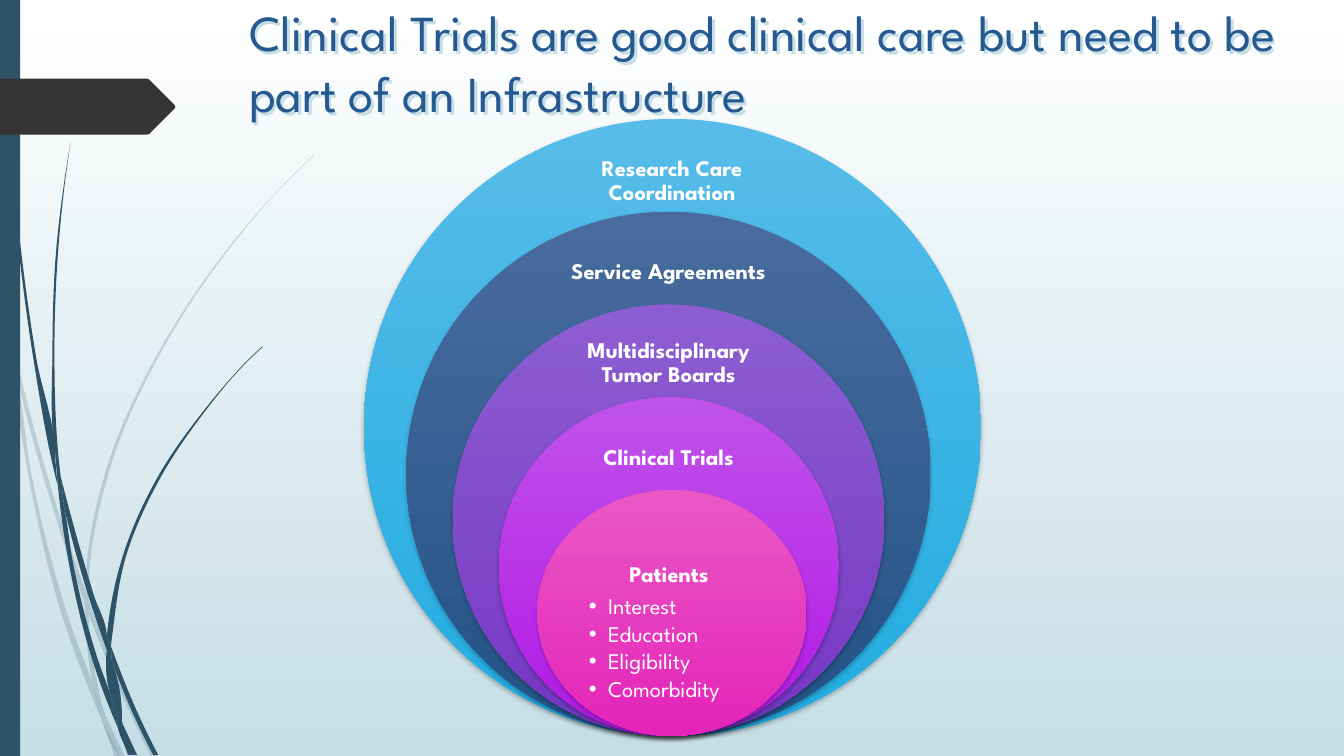
import math
import typing
from dataclasses import dataclass

import lxml.etree
import pptx
import pptx.dml.color
import pptx.dml.fill
import pptx.enum.shapes
import pptx.enum.text
import pptx.oxml.ns
import pptx.util

Point = tuple[float, float]
Edge = tuple[Point, ...]

COLUMNS, ROWS = 1333, 750
SLIDE_WIDTH, SLIDE_HEIGHT = pptx.util.Inches(13.33), pptx.util.Inches(7.5)


@dataclass(frozen=True)
class Theme:
    font: str = "League Spartan"
    title_size: float = 36
    label_size: float = 16
    title: str = "265991"
    label: str = "FFFFFF"
    stem: str = "2E5369"
    tab: str = "353535"
    shadow: str = "000000"
    title_shadow: str = "C5DEE5"
    backdrop: tuple[str, str] = ("FFFFFF", "C5DEE5")


@dataclass(frozen=True)
class Box:
    column: float
    row: float
    columns: float
    rows: float

    def format(self) -> dict[str, int]:
        return {"left": across(self.column), "top": down(self.row),
                "width": across(self.columns), "height": down(self.rows)}


@dataclass(frozen=True)
class Ring:
    column: float
    columns: float
    gradient: tuple[str, str]
    label: str = ""
    label_box: typing.Optional[Box] = None


@dataclass(frozen=True)
class Blade:
    """A grass blade, outlined by one edge going out and one coming back."""
    out: Edge
    back: Edge


THEME = Theme()
RING_TOP, RING_STEP, RING_BOTTOM = 118, 92, 730
RINGS = (
    Ring(361, 612, ("57BCE9", "22ADE2"), "Research Care Coordination", Box(552, 149, 229, 61)),
    Ring(403, 520, ("496B9E", "235387"), "Service Agreements", Box(551, 240, 224, 60)),
    Ring(449, 428, ("8D5ED1", "7536C4"), "Multidisciplinary Tumor Boards", Box(552, 331, 222, 59)),
    Ring(495, 337, ("C052EB", "B219E4"), "Clinical Trials", Box(572, 424, 182, 61)),
    Ring(533, 267, ("EA58C6", "E424B9")),
)
PATIENT_FACTORS = ("Interest", "Education", "Eligibility", "Comorbidity")
FAINT_BLADES = (
    Blade(((11, 350), (9, 322), (0, 282)), ((0, 299), (10, 344), (11, 350))),
    Blade(((17, 376), (58, 522), (84, 599)), ((85, 586), (62, 520), (14, 345))),
    Blade(((88, 610), (123, 694), (150, 751)), ((155, 751), (127, 692), (92, 607), (88, 596))),
    Blade(((119, 751), (124, 751)), ((105, 711),)),
    Blade(((11, 350), (28, 470), (65, 621), (92, 693), (101, 714)),
          ((99, 707), (93, 683), (70, 619), (31, 469), (17, 376), (11, 350))),
    Blade(((84, 599), (87, 646), (93, 683), (96, 692), (105, 711)),
          ((103, 706), (91, 646), (88, 610), (88, 608))),
    Blade(((88, 596), (88, 584), (110, 462), (160, 349), (229, 245), (268, 198), (290, 175), (312, 154)),
          ((312, 153), (289, 175), (268, 197), (228, 244), (158, 348), (107, 461), (85, 584), (85, 586))),
    Blade(((101, 714), (114, 751)), ((119, 751),)),
    Blade(((88, 608), (88, 610), (88, 596)), ((85, 586), (84, 599))),
    Blade(((93, 683), (99, 707), (101, 714), (119, 751)), ((105, 711), (96, 692))),
)
DARK_BLADES = (
    Blade(((3, 0), (4, 48), (7, 110), (17, 233), (33, 355), (56, 477), (57, 481)),
          ((55, 457), (55, 453), (36, 355), (19, 232), (8, 109), (5, 48), (4, 0))),
    Blade(((64, 505), (88, 592), (106, 645)), ((106, 633), (106, 631), (93, 590), (60, 472))),
    Blade(((111, 656), (132, 708), (152, 749)), ((157, 749), (136, 706), (113, 649), (110, 641))),
    Blade(((57, 477), (68, 557), (93, 659), (111, 708), (117, 722)),
          ((116, 717), (110, 691), (98, 657), (72, 556), (64, 505), (57, 477))),
    Blade(((60, 472), (58, 453), (54, 349), (58, 245), (63, 193), (70, 141)),
          ((70, 141), (62, 193), (56, 245), (52, 349), (55, 449), (60, 472))),
    Blade(((133, 749), (136, 749)), ((122, 719),)),
    Blade(((57, 477), (64, 505)), ((60, 472), (55, 449), (55, 453))),
    Blade(((110, 641), (111, 633), (125, 552), (158, 476), (205, 406), (231, 374), (245, 359), (261, 344)),
          ((260, 344), (245, 358), (231, 373), (204, 405), (156, 474), (122, 551), (106, 631))),
    Blade(((117, 722), (127, 749)), ((131, 749),)),
    Blade(((106, 645), (110, 691), (116, 706), (122, 719)), ((121, 716), (111, 656), (109, 651))),
    Blade(((106, 645), (109, 651), (111, 656)), ((110, 641), (106, 631))),
    Blade(((110, 691), (116, 717), (117, 722), (130, 749)), ((133, 749), (122, 719), (116, 706))),
)
TAB_OUTLINE = ((0, 78), (146, 78), (148, 79), (173, 104), (174, 106), (173, 108), (148, 133), (146, 133.5), (0, 133.5))


def across(columns: float) -> int:
    return round(SLIDE_WIDTH * columns / COLUMNS)


def down(rows: float) -> int:
    return round(SLIDE_HEIGHT * rows / ROWS)


def rgb(code: str) -> pptx.dml.color.RGBColor:
    return pptx.dml.color.RGBColor.from_string(code)


def apply(target: typing.Any, formats: dict[str, typing.Any]) -> None:
    for name, value in formats.items():
        setattr(target, name, value)


def add_child(parent: typing.Any, tag: str, **attributes: typing.Any) -> typing.Any:
    texts = {name: str(value) for name, value in attributes.items()}
    return lxml.etree.SubElement(parent, pptx.oxml.ns.qn(tag), texts)


def cast_shadow(shape: typing.Any, color: str, alpha: int, blur: float, distance: float, angle: int) -> None:
    shape.shadow.inherit = False
    effects = shape.element.spPr.find(pptx.oxml.ns.qn("a:effectLst"))
    shadow = add_child(effects, "a:outerShdw", blurRad=pptx.util.Pt(blur), dist=pptx.util.Pt(distance),
                       dir=angle * 60000, algn="tl", rotWithShape=0)
    add_child(add_child(shadow, "a:srgbClr", val=color), "a:alpha", val=alpha * 1000)


def paint_gradient(fill: pptx.dml.fill.FillFormat, colors: tuple[str, str]) -> None:
    fill.gradient()
    fill.gradient_angle = 270
    for stop, color in zip(fill.gradient_stops, colors):
        stop.color.rgb = rgb(color)


def paint_flat(shape: typing.Any, color: str, alpha: int = 100) -> None:
    shape.shadow.inherit = False
    shape.line.fill.background()
    shape.fill.solid()
    shape.fill.fore_color.rgb = rgb(color)
    if alpha < 100:
        swatch = next(shape.element.spPr.iter(pptx.oxml.ns.qn("a:srgbClr")))
        add_child(swatch, "a:alpha", val=alpha * 1000)


def slopes(edge: Edge) -> list[Point]:
    """Unit-speed tangent at each anchor, weighted towards the nearer neighbour."""
    chords = [math.dist(a, b) or 1 for a, b in zip(edge, edge[1:])]
    speeds = [((b[0] - a[0]) / c, (b[1] - a[1]) / c) for a, b, c in zip(edge, edge[1:], chords)]
    inner = [tuple((u * d + v * c) / (c + d) for u, v in zip(before, after))
             for before, after, c, d in zip(speeds, speeds[1:], chords, chords[1:])]
    if not inner:
        return speeds * 2
    first = tuple(2 * u - v for u, v in zip(speeds[0], inner[0]))
    final = tuple(2 * u - v for u, v in zip(speeds[-1], inner[-1]))
    return [first, *inner, final]


def add_outline(shapes: typing.Any, points: Edge, color: str, alpha: int = 100) -> typing.Any:
    first, *rest = [(across(x), down(y)) for x, y in points]
    builder = shapes.build_freeform(*first)
    builder.add_line_segments(rest, close=True)
    outline = builder.convert_to_shape()
    paint_flat(outline, color, alpha)
    return outline


def add_blade(shapes: typing.Any, blade: Blade, alpha: int) -> None:
    anchors = blade.out + blade.back
    outline = add_outline(shapes, anchors, THEME.stem, alpha)
    left, top = min(x for x, _ in anchors), min(y for _, y in anchors)
    segments = list(outline.element.iter(pptx.oxml.ns.qn("a:lnTo")))
    for edge, offset in ((blade.out, 0), (blade.back, len(blade.out))):
        if len(edge) < 3:
            continue
        tangents = slopes(edge)
        for index, (start, end) in enumerate(zip(edge, edge[1:])):
            segment, reach = segments[offset + index], math.dist(start, end) / 3
            for place, (anchor, tangent, sign) in enumerate(
                    ((start, tangents[index], 1), (end, tangents[index + 1], -1))):
                x, y = (a + sign * reach * t for a, t in zip(anchor, tangent))
                segment.insert(place, add_child(segment, "a:pt", x=across(x - left), y=down(y - top)))
            segment.tag = pptx.oxml.ns.qn("a:cubicBezTo")


def add_ring(shapes: typing.Any, ring: Ring, top: float) -> None:
    box = Box(ring.column, top, ring.columns, RING_BOTTOM - top)
    disc = shapes.add_shape(pptx.enum.shapes.MSO_SHAPE.OVAL, **box.format())
    paint_gradient(disc.fill, ring.gradient)
    disc.line.fill.background()
    cast_shadow(disc, THEME.shadow, 25, 3, 2, 90)
    if ring.label_box:
        label = shapes.add_textbox(**ring.label_box.format())
        format_frame(label.text_frame, pptx.enum.text.MSO_ANCHOR.MIDDLE)
        write_heading(label.text_frame.paragraphs[0], ring.label)


def format_frame(frame: typing.Any, anchor: typing.Any, across_inset: float = 12, down_inset: float = 12) -> None:
    apply(frame, {"word_wrap": True, "auto_size": pptx.enum.text.MSO_AUTO_SIZE.NONE, "vertical_anchor": anchor,
                  "margin_left": across(across_inset), "margin_right": across(across_inset),
                  "margin_top": down(down_inset), "margin_bottom": down(down_inset)})


def write(paragraph: typing.Any, text: str, size: float, color: str, bold: bool, **formats: typing.Any) -> None:
    apply(paragraph, {"space_before": pptx.util.Pt(0), **formats})
    run = paragraph.add_run()
    run.text = text
    apply(run.font, {"name": THEME.font, "size": pptx.util.Pt(size), "bold": bold})
    run.font.color.rgb = rgb(color)


def write_heading(paragraph: typing.Any, text: str) -> None:
    write(paragraph, text, THEME.label_size, THEME.label, True, line_spacing=0.9,
          space_after=pptx.util.Pt(5.6), alignment=pptx.enum.text.PP_ALIGN.CENTER)


def fill_title(title: typing.Any) -> None:
    apply(title, Box(237, 4, 1040, 115).format())
    format_frame(title.text_frame, pptx.enum.text.MSO_ANCHOR.MIDDLE, 10, 5)
    write(title.text_frame.paragraphs[0],
          "Clinical Trials are good clinical care but need to be part of an Infrastructure",
          THEME.title_size, THEME.title, False, alignment=pptx.enum.text.PP_ALIGN.LEFT)
    cast_shadow(title, THEME.title_shadow, 100, 0, 3, 45)


def indent(paragraph: typing.Any, margin: int) -> typing.Any:
    properties = paragraph._p.get_or_add_pPr()
    properties.set("marL", str(margin))
    properties.set("indent", str(-margin))
    return properties


def fill_patients(patients: typing.Any) -> None:
    apply(patients, Box(572, 547, 189, 122).format())
    frame = patients.text_frame
    format_frame(frame, pptx.enum.text.MSO_ANCHOR.TOP)
    write_heading(frame.paragraphs[0], "Patients ")
    add_child(indent(frame.paragraphs[0], 0), "a:buNone")
    for factor in PATIENT_FACTORS:
        paragraph = frame.add_paragraph()
        write(paragraph, factor, THEME.label_size, THEME.label, False, level=1, line_spacing=0.9,
              space_after=pptx.util.Pt(2.4), alignment=pptx.enum.text.PP_ALIGN.LEFT)
        properties = indent(paragraph, across(19))
        add_child(properties, "a:buFont", typeface="Arial")
        add_child(properties, "a:buChar", char="•")


def main() -> None:
    deck = pptx.Presentation()
    apply(deck, {"slide_width": SLIDE_WIDTH, "slide_height": SLIDE_HEIGHT})
    slide = deck.slides.add_slide(deck.slide_layouts[1])
    paint_gradient(slide.background.fill, THEME.backdrop)
    title, patients = slide.placeholders
    for blades, alpha in ((FAINT_BLADES, 20), (DARK_BLADES, 100)):
        tuft = slide.shapes.add_group_shape()
        for blade in blades:
            add_blade(tuft.shapes, blade, alpha)
    stripe = slide.shapes.add_shape(pptx.enum.shapes.MSO_SHAPE.RECTANGLE, **Box(0, 0, 20, ROWS).format())
    paint_flat(stripe, THEME.stem)
    add_outline(slide.shapes, TAB_OUTLINE, THEME.tab)
    fill_title(title)
    for order, ring in enumerate(RINGS):
        add_ring(slide.shapes, ring, RING_TOP + order * RING_STEP)
    fill_patients(patients)
    patients.element.getparent().append(patients.element)
    deck.save("out.pptx")


if __name__ == "__main__":
    main()
